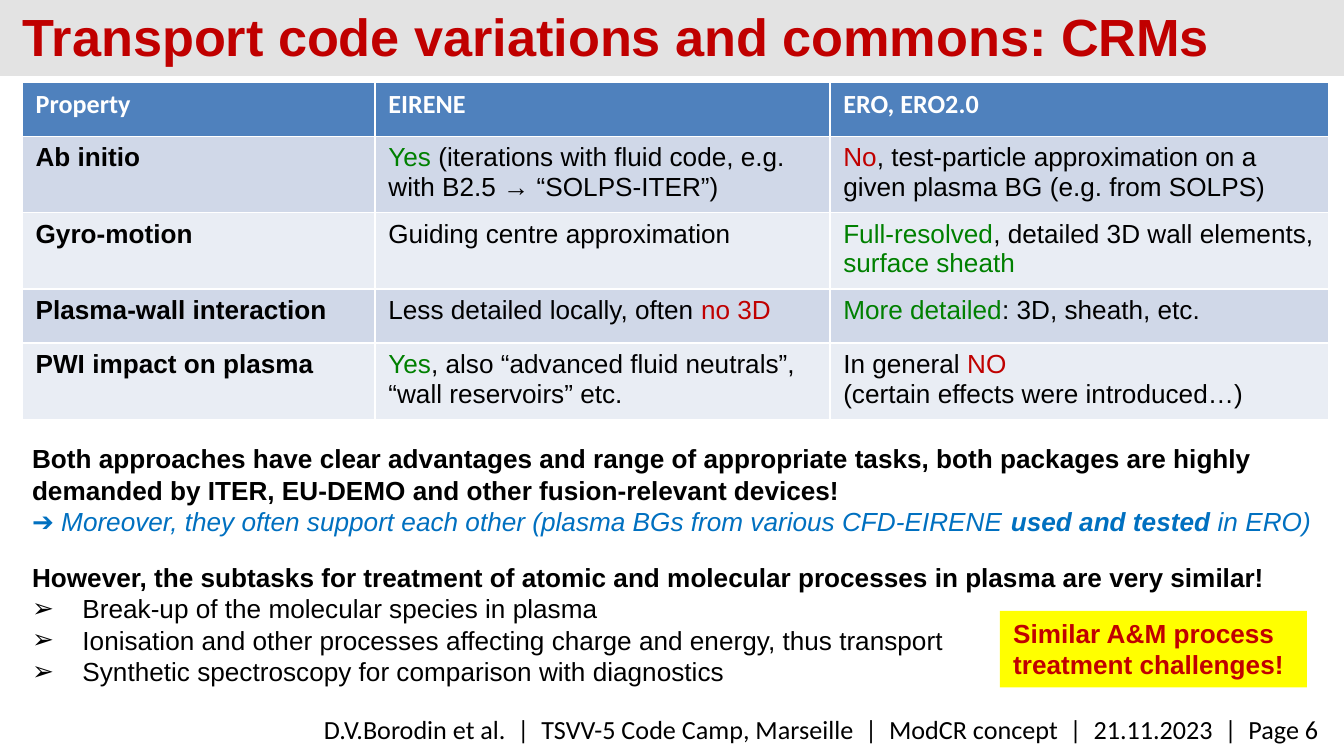
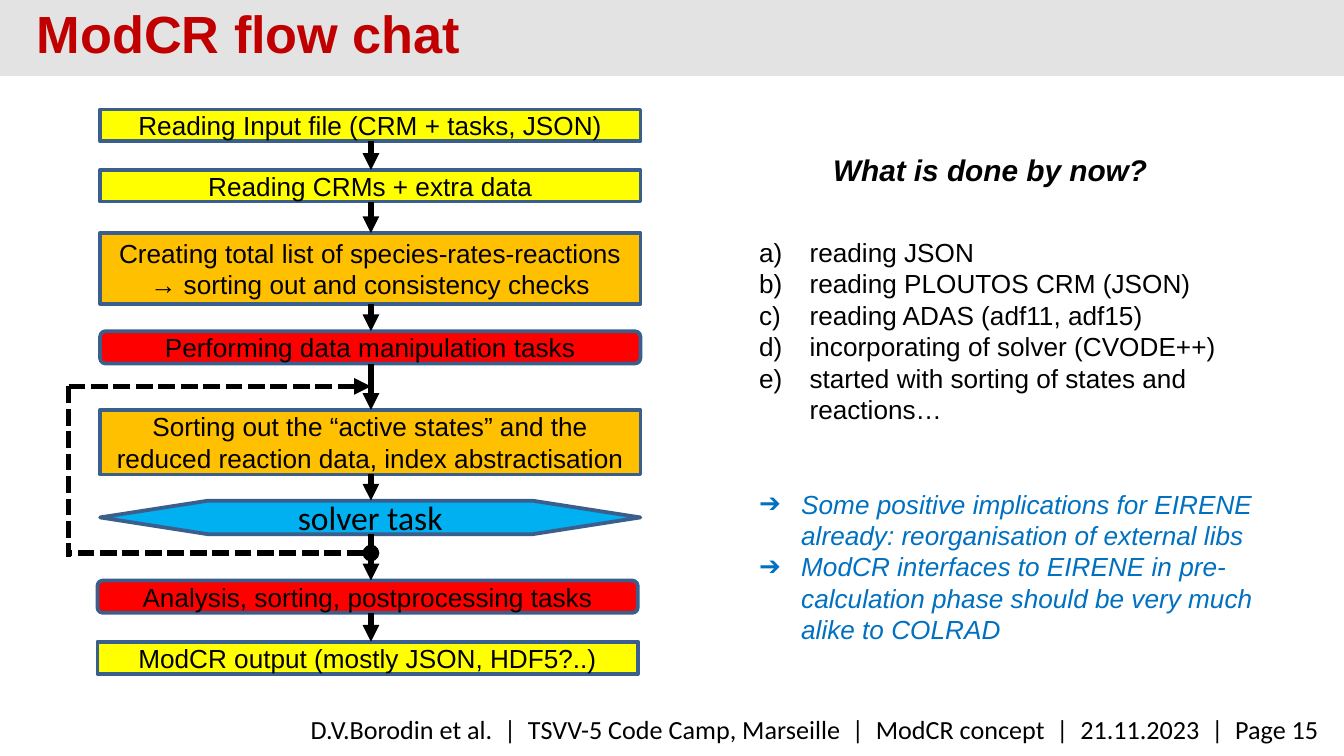
from dataclasses import dataclass

from lxml.etree import SubElement
from pptx import Presentation
from pptx.dml.color import RGBColor
from pptx.enum.shapes import MSO_CONNECTOR, MSO_SHAPE
from pptx.enum.text import MSO_ANCHOR, PP_ALIGN
from pptx.oxml.ns import qn
from pptx.util import Inches, Pt

# Shared look; every length is counted in grid steps of a tenth of an inch
STEP = 0.1
BLACK, WHITE, BAND = "000000", "FFFFFF", "E3E3E3"
RED, GREEN, BLUE = "C00000", "008000", "0070C0"
YELLOW, ORANGE, BRIGHT_RED, SKY = "FFFF00", "FFC000", "FF0000", "00B0F0"
HEADER_FILL, ROW_FILLS = "4F81BD", ("D0D8E8", "E9EDF4")
OUTLINE = "3A5F8C"
BODY_FONT, SECOND_FONT = "Arial", "Calibri"
FOOTER = ("D.V.Borodin et al.", "TSVV-5 Code Camp, Marseille", "ModCR concept", "21.11.2023")


@dataclass
class Box:
    left: float
    top: float
    width: float
    height: float

    def inside(self, left, top, width, height):
        return Box(self.left + left, self.top + top, width, height)

    def lengths(self):
        return [grid(n) for n in (self.left, self.top, self.width, self.height)]


PAGE = Box(0, 0, 100, 56.25)


def grid(steps):
    return Inches(round(steps * STEP, 4))


def colour(code):
    return RGBColor.from_string(code)


# Text helpers
def span(text, color=None, **styles):
    return text, color, styles


def write(para, spans, size=14, font=BODY_FONT, color=BLACK, bold=False, italic=False):
    """Fill a paragraph with strings or spans; a span overrides the paragraph's style."""
    for piece in spans:
        text, own_color, styles = span(piece) if isinstance(piece, str) else piece
        run = para.add_run()
        run.text = text
        run.font.size = Pt(size)
        run.font.name = font
        run.font.bold = styles.get("bold", bold)
        run.font.italic = styles.get("italic", italic)
        run.font.color.rgb = colour(own_color or color)


def next_para(frame, before=0):
    first = frame.paragraphs[0]
    para = frame.add_paragraph() if first.runs else first
    if before:
        para.space_before = Pt(before)
    return para


def add_line(frame, *spans, align=PP_ALIGN.LEFT, before=0, **style):
    para = next_para(frame, before)
    para.alignment = align
    write(para, spans, **style)


def add_item(frame, text, bullet=None, indent=3.75, before=0, **style):
    """List line with a bullet character, or with a), b), c) when none is given."""
    para = next_para(frame, before)
    properties = para._p.get_or_add_pPr()
    properties.set("marL", str(grid(indent)))
    properties.set("indent", str(-grid(indent)))
    SubElement(properties, qn("a:buFont")).set("typeface", BODY_FONT)
    if bullet:
        SubElement(properties, qn("a:buChar")).set("char", bullet)
    else:
        SubElement(properties, qn("a:buAutoNum")).set("type", "alphaLcParenR")
    write(para, [text], **style)


def text_area(page, box):
    frame = page.shapes.add_textbox(*box.lengths()).text_frame
    frame.word_wrap = True
    return frame


# Shape helpers
def add_block(page, box, fill, kind=MSO_SHAPE.RECTANGLE, outline=None, anchor=MSO_ANCHOR.TOP):
    block = page.shapes.add_shape(kind, *box.lengths())
    block.shadow.inherit = False
    block.fill.solid()
    block.fill.fore_color.rgb = colour(fill)
    if outline:
        block.line.color.rgb = colour(outline)
        block.line.width = Pt(2)
    else:
        block.line.fill.background()
    block.text_frame.word_wrap = True
    block.text_frame.vertical_anchor = anchor
    return block


def add_link(page, start, end, dash=None, head=None, tail=None):
    link = page.shapes.add_connector(
        MSO_CONNECTOR.STRAIGHT, *[grid(n) for n in (*start, *end)])
    link.line.color.rgb = colour(BLACK)
    link.line.width = Pt(3)
    line = link.line._get_or_add_ln()
    for tag, key, value in (("a:prstDash", "val", dash),
                            ("a:headEnd", "type", head),
                            ("a:tailEnd", "type", tail)):
        if value:
            SubElement(line, qn(tag)).set(key, value)
    SubElement(link._element.spPr, qn("a:effectLst"))


# Parts found on every slide
def start_page(deck, title, title_box, number, inset=0):
    page = deck.slides.add_slide(deck.slide_layouts[5])
    band = add_block(page, PAGE.inside(0, 0, PAGE.width, 5.64), BAND)
    page.shapes._spTree.insert(2, band._element)

    heading = page.shapes.title
    heading.left, heading.top, heading.width, heading.height = title_box.lengths()
    frame = heading.text_frame
    frame.margin_left = frame.margin_right = grid(inset)
    frame.margin_top = frame.margin_bottom = 0
    frame.vertical_anchor = MSO_ANCHOR.MIDDLE
    add_line(frame, title, size=28, color=RED, bold=True)

    footer = text_area(page, PAGE.inside(19.3, 52.6, 79.9, 3.4))
    add_line(footer, "  |  ".join((*FOOTER, f"Page {number}")),
             align=PP_ALIGN.RIGHT, font=SECOND_FONT)
    return page


# Slide 1: comparison of the transport codes
HEADERS = ("Property", "EIRENE", "ERO, ERO2.0")
COMPARISON = (
    ("Ab initio",
     [[span("Yes ", GREEN), "(iterations with fluid code, e.g. with B2.5 → “SOLPS-ITER”)"]],
     [[span("No", RED), ", test-particle approximation on a given plasma BG (e.g. from SOLPS)"]]),
    ("Gyro-motion",
     [["Guiding centre approximation"]],
     [[span("Full-resolved", GREEN), ", detailed 3D wall elements, ",
       span("surface sheath", GREEN)]]),
    ("Plasma-wall interaction",
     [["Less detailed locally, often ", span("no 3D", RED)]],
     [[span("More detailed", GREEN), ": 3D, sheath, etc."]]),
    ("PWI impact on plasma",
     [[span("Yes", GREEN), ", also “advanced fluid neutrals”, “wall reservoirs” etc."]],
     [["In general ", span("NO", RED)], ["(certain effects were introduced…)"]]),
)


def fill_cell(cell, fill, lines, **style):
    cell.fill.solid()
    cell.fill.fore_color.rgb = colour(fill)
    for spans in lines:
        add_line(cell.text_frame, *spans, **style)


def comparison_table(page, box):
    table = page.shapes.add_table(len(COMPARISON) + 1, len(HEADERS), *box.lengths()).table
    for column, width in zip(table.columns, (26.25, 33.85, 37.1)):
        column.width = grid(width)
    for row, height in zip(table.rows, (4.05, 5.65, 5.65, 4.05, 5.6)):
        row.height = grid(height)
    for column, header in enumerate(HEADERS):
        fill_cell(table.cell(0, column), HEADER_FILL, [[header]],
                  font=SECOND_FONT, color=WHITE, bold=True)
    for row, (name, *codes) in enumerate(COMPARISON, 1):
        fill = ROW_FILLS[(row - 1) % 2]
        fill_cell(table.cell(row, 0), fill, [[name]], bold=True)
        for column, lines in enumerate(codes, 1):
            fill_cell(table.cell(row, column), fill, lines)


def conclusions(page, box):
    frame = text_area(page, box)
    add_line(frame, "Both approaches have clear advantages and range of appropriate tasks, "
             "both packages are highly demanded by ITER, EU-DEMO and other "
             "fusion-relevant devices!", bold=True)
    add_line(frame, "➔ Moreover, they often support each other "
             "(plasma BGs from various CFD-EIRENE ",
             span("used and tested", bold=True), " in ERO)", color=BLUE, italic=True)
    add_line(frame, "However, the subtasks for treatment of atomic and molecular processes "
             "in plasma are very similar!", bold=True, before=13)
    for text in ("Break-up of the molecular species in plasma",
                 "Ionisation and other processes affecting charge and energy, thus transport",
                 "Synthetic spectroscopy for comparison with diagnostics"):
        add_item(frame, text, "➢")

    # Yellow call-out at the lower right
    callout = add_block(page, box.inside(73, 13, 22.85, 5.7), YELLOW)
    add_line(callout.text_frame, "Similar A&M process treatment challenges!",
             color=RED, bold=True)


# Slide 2: flow chart and progress
PROCESS = MSO_SHAPE.FLOWCHART_PROCESS
ROUNDED = MSO_SHAPE.FLOWCHART_ALTERNATE_PROCESS
PREPARATION = MSO_SHAPE.FLOWCHART_PREPARATION
# left, top, height, kind, fill, lines
FLOW = (
    (2.35, 0, 2.35, PROCESS, YELLOW, ["Reading Input file (CRM + tasks, JSON)"]),
    (2.35, 4.5, 2.35, PROCESS, YELLOW, ["Reading CRMs + extra data"]),
    (2.35, 9.2, 5.25, PROCESS, ORANGE, ["Creating total list of species-rates-reactions",
                                        "→ sorting out and consistency checks"]),
    (2.35, 16.5, 2.4, ROUNDED, BRIGHT_RED, ["Performing data manipulation tasks"]),
    (2.35, 22.35, 4.8, PROCESS, ORANGE, ["Sorting out the “active states” and the "
                                         "reduced reaction data, index abstractisation"]),
    (2.35, 29.1, 2.5, PREPARATION, SKY, ["solver task"]),
    (2.15, 35.05, 2.4, ROUNDED, BRIGHT_RED, ["Analysis, sorting, postprocessing tasks"]),
    (2.15, 39.6, 2.4, PROCESS, YELLOW, ["ModCR output (mostly JSON, HDF5?..)"]),
)


def flow_chart(page, box):
    for left, top, height, kind, fill, lines in FLOW:
        block = add_block(page, box.inside(left, top, 40.2, height), fill, kind,
                          OUTLINE, MSO_ANCHOR.MIDDLE)
        style = {"size": 18, "font": SECOND_FONT} if kind == PREPARATION else {}
        for text in lines:
            add_line(block.text_frame, text, align=PP_ALIGN.CENTER, **style)

    # Arrows from each step to the next
    axis = box.left + 22.5
    for (_, top, height, *_), (_, next_top, *_) in zip(FLOW, FLOW[1:]):
        add_link(page, (axis, box.top + top + height), (axis, box.top + next_top),
                 tail="triangle")

    # Dashed loop from below the solver back to the sorting step
    entry, leave = box.top + 20.6, box.top + 33
    add_link(page, (axis, leave), (box.left, leave), "sysDash", head="oval")
    add_link(page, (box.left, entry), (box.left, leave + 0.3), "sysDash")
    add_link(page, (box.left, entry), (axis, entry), "sysDash", tail="triangle")


def progress(page, box):
    heading = text_area(page, box.inside(5.5, 0, 26, 3.7))
    add_line(heading, "What is done by now?", size=16, bold=True, italic=True)

    frame = text_area(page, box.inside(0, 6.3, box.width, 31.6))
    for text in ("reading JSON", "reading PLOUTOS CRM (JSON)",
                 "reading ADAS (adf11, adf15)", "incorporating of solver (CVODE++)",
                 "started with sorting of states and reactions…"):
        add_item(frame, text)
    for text, before in (
            ("Some positive implications for EIRENE already: "
             "reorganisation of external libs", 34),
            ("ModCR interfaces to EIRENE in pre-calculation phase "
             "should be very much alike to COLRAD", 0)):
        add_item(frame, text, "➔", 3.13, before=before, color=BLUE, italic=True)


def main():
    deck = Presentation()
    deck.slide_width, deck.slide_height = grid(PAGE.width), grid(PAGE.height)

    page = start_page(deck, "Transport code variations and commons: CRMs",
                      PAGE.inside(1.7, 0.85, 90, 3.6), 6)
    comparison_table(page, PAGE.inside(1.65, 6.1, 97.2, 25))
    conclusions(page, PAGE.inside(1.4, 32.45, 97.3, 19.9))

    page = start_page(deck, "ModCR flow chat", PAGE.inside(1.75, -0.4, 70.1, 5.7), 15, inset=1)
    flow_chart(page, PAGE.inside(5.1, 8.15, 42.6, 42))
    progress(page, PAGE.inside(55.5, 10.8, 40.2, 37.9))

    deck.save("out.pptx")


if __name__ == "__main__":
    main()
